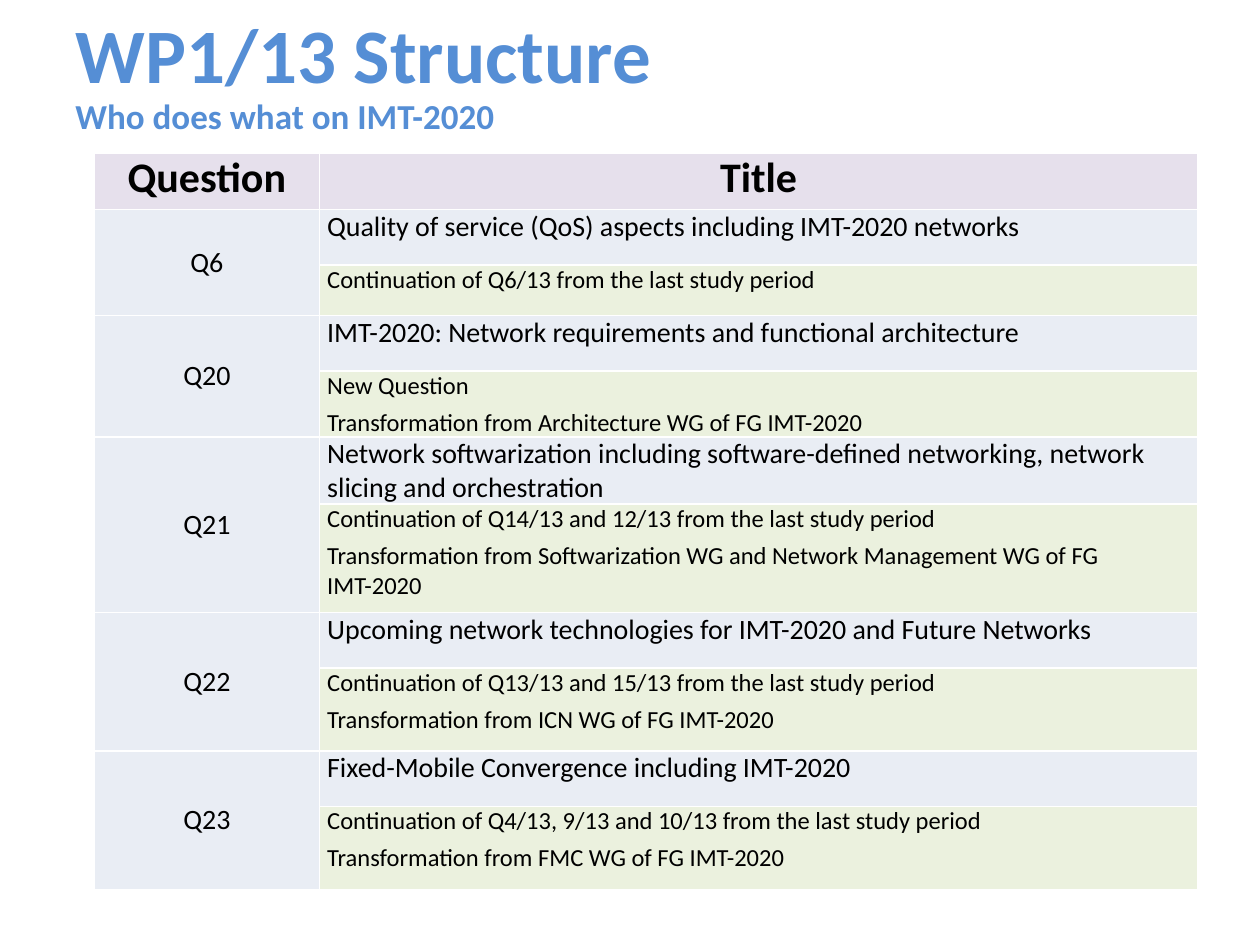
"""Build the WP1/13 structure slide: a table of questions and their origins."""
from lxml import etree
from pptx import Presentation
from pptx.dml.color import RGBColor
from pptx.enum.text import MSO_ANCHOR, PP_ALIGN
from pptx.oxml.ns import qn
from pptx.util import Pt

LEFT, CENTER = PP_ALIGN.LEFT, PP_ALIGN.CENTER
TOP, MIDDLE = MSO_ANCHOR.TOP, MSO_ANCHOR.MIDDLE
BLUE = RGBColor(0x55, 0x8E, 0xD5)
BLACK = RGBColor(0, 0, 0)
WHITE = RGBColor(0xFF, 0xFF, 0xFF)
LILAC = RGBColor(0xE6, 0xE0, 0xEC)
PALE_BLUE = RGBColor(0xE9, 0xED, 0xF4)
PALE_GREEN = RGBColor(0xEB, 0xF1, 0xDE)

TITLE = "WP1/13 Structure"
SUBTITLE = "Who does what on IMT-2020"
HEADERS = ["Question", "Title"]
QUESTIONS = [
    ("Q6", "Quality of service (QoS) aspects including IMT-2020 networks",
     ["Continuation of Q6/13 from the last study period"], 28.8),
    ("Q20", "IMT-2020: Network requirements and functional architecture",
     ["New Question", "Transformation from Architecture WG of FG IMT-2020"], 28.8),
    ("Q21", "Network softwarization including software-defined networking, "
     "network slicing and orchestration",
     ["Continuation of Q14/13 and 12/13 from the last study period",
      "Transformation from Softwarization WG and Network Management WG of FG IMT-2020"], 61.9),
    ("Q22", "Upcoming network technologies for IMT-2020 and Future Networks",
     ["Continuation of Q13/13 and 15/13 from the last study period",
      "Transformation from ICN WG of FG IMT-2020"], 47.5),
    ("Q23", "Fixed-Mobile Convergence including IMT-2020",
     ["Continuation of Q4/13, 9/13 and 10/13 from the last study period",
      "Transformation from FMC WG of FG IMT-2020"], 47.5),
]
COL_WIDTHS = [128.5, 502]
HEADER_HEIGHT, NAME_HEIGHT = 32.4, 31.7

HEADING = {"name": "Calibri", "size": Pt(44), "bold": True}
SUBHEADING = {**HEADING, "size": Pt(20)}
HEADER = {**HEADING, "size": Pt(24)}
NAME = {**HEADING, "size": Pt(16), "bold": False}
ORIGIN = {**NAME, "size": Pt(14)}


def write(tf, lines, fmt, color, align=LEFT, space=0):
    for i, line in enumerate(lines):
        p = tf.add_paragraph() if i else tf.paragraphs[0]
        p.alignment = align
        if space:
            p.space_after = Pt(space)
            if i:
                p.space_before = Pt(space)
        r = p.add_run()
        r.text = line
        for key, value in fmt.items():
            setattr(r.font, key, value)
        r.font.color.rgb = color


def style_cell(cell, fill):
    cell.margin_left = cell.margin_right = Pt(4.5)
    cell.margin_top = cell.margin_bottom = 0
    tc_pr = cell._tc.get_or_add_tcPr()
    for side in ("a:lnL", "a:lnR", "a:lnT", "a:lnB"):
        ln = etree.SubElement(tc_pr, qn(side), w=str(Pt(1)))
        solid = etree.SubElement(ln, qn("a:solidFill"))
        etree.SubElement(solid, qn("a:srgbClr"), val=str(WHITE))
    cell.fill.solid()
    cell.fill.fore_color.rgb = fill


def fill_cell(cell, lines, fmt, align=LEFT, anchor=TOP, space=2):
    cell.vertical_anchor = anchor
    write(cell.text_frame, lines, fmt, BLACK, align, space)


def add_headings(s):
    title = s.shapes.title
    title.left, title.top, title.width, title.height = Pt(36), Pt(-2.9), Pt(648), Pt(66.2)
    title.text_frame.vertical_anchor = MIDDLE
    write(title.text_frame, [TITLE], HEADING, BLUE)
    sp = s.shapes.add_textbox(Pt(36), Pt(50.4), Pt(257), Pt(31.7))
    sp.text_frame.word_wrap = False
    write(sp.text_frame, [SUBTITLE], SUBHEADING, BLUE)


def add_questions(s):
    heights = [HEADER_HEIGHT]
    for *_, origin_height in QUESTIONS:
        heights += [NAME_HEIGHT, origin_height]
    table = s.shapes.add_table(len(heights), 2, Pt(54), Pt(87.4),
                               Pt(sum(COL_WIDTHS)), Pt(sum(heights))).table
    for column, width in zip(table.columns, COL_WIDTHS):
        column.width = Pt(width)
    for row, height in enumerate(heights):
        table.rows[row].height = Pt(height)
        fill = LILAC if row == 0 else PALE_BLUE if row % 2 else PALE_GREEN
        style_cell(table.cell(row, 0), fill if row == 0 else PALE_BLUE)
        style_cell(table.cell(row, 1), fill)
    for col, header in enumerate(HEADERS):
        fill_cell(table.cell(0, col), [header], HEADER, CENTER, space=4)
    for i, (number, name, origins, _) in enumerate(QUESTIONS):
        row = 1 + 2 * i
        table.cell(row, 0).merge(table.cell(row + 1, 0))
        fill_cell(table.cell(row, 0), [number], NAME, CENTER, MIDDLE)
        fill_cell(table.cell(row, 1), [name], NAME)
        fill_cell(table.cell(row + 1, 1), origins, ORIGIN)


def main():
    prs = Presentation()
    prs.slide_width, prs.slide_height = Pt(720), Pt(540)
    s = prs.slides.add_slide(prs.slide_layouts[5])
    add_headings(s)
    add_questions(s)
    prs.save("out.pptx")


if __name__ == "__main__":
    main()
